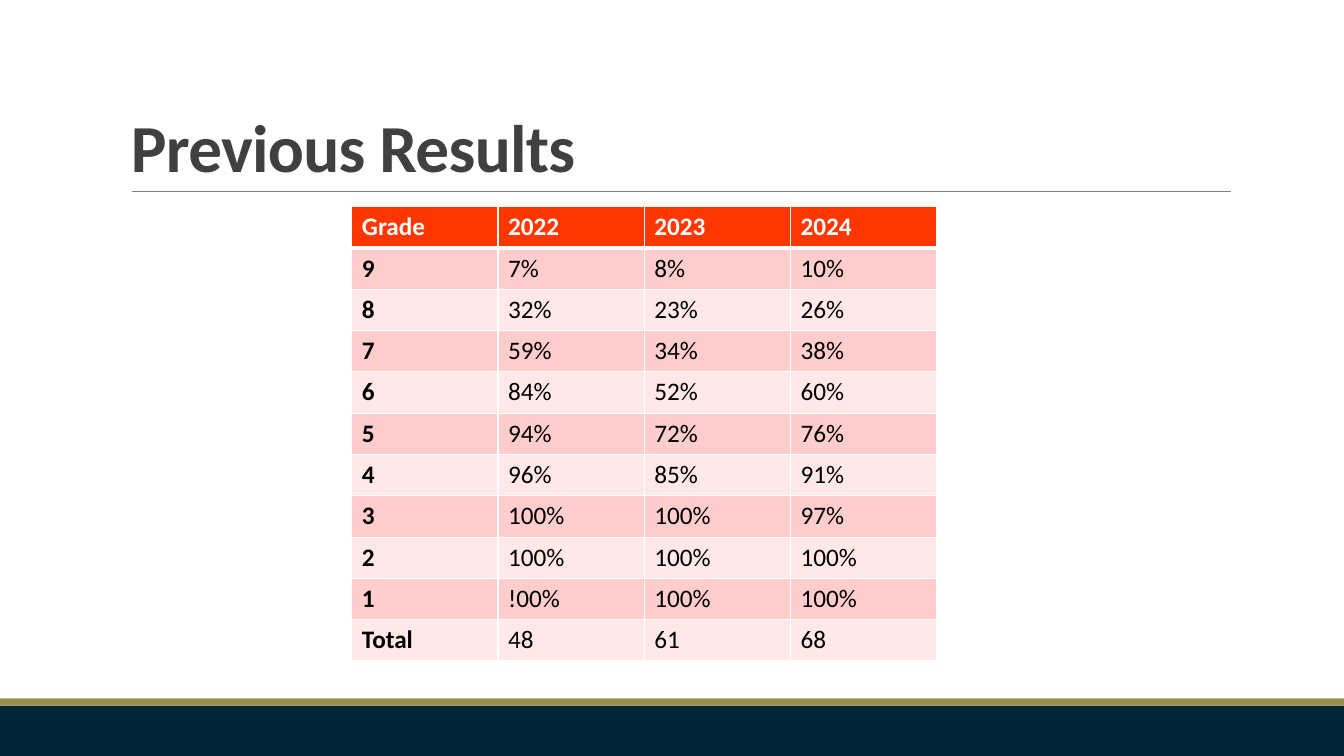
from dataclasses import dataclass
from typing import Any

from lxml import etree
from pptx import Presentation
from pptx.dml.color import RGBColor
from pptx.enum.shapes import MSO_CONNECTOR, MSO_SHAPE
from pptx.enum.text import MSO_ANCHOR
from pptx.oxml.ns import qn
from pptx.util import Inches, Pt

RECTANGLE = MSO_SHAPE.RECTANGLE
STRAIGHT = MSO_CONNECTOR.STRAIGHT
BOTTOM = MSO_ANCHOR.BOTTOM


@dataclass(frozen=True)
class Theme:
    font: str = "Calibri"
    title_size: float = 48
    table_size: float = 18
    title: str = "404040"
    rule: str = "808080"
    navy: str = "002639"
    gold: str = "998F4D"
    header: str = "FF3600"
    bands: tuple[str, str] = ("FFCECC", "FFE8E7")
    white: str = "FFFFFF"
    black: str = "000000"


@dataclass(frozen=True)
class FooterBand:
    top: float
    height: float
    color: str


THEME = Theme()
SLIDE_WIDTH, SLIDE_HEIGHT = 13.33, 7.5
FOOTER_BANDS = (
    FooterBand(7, 0.5, THEME.navy),
    FooterBand(6.93, 0.07, THEME.gold),
)
COLUMN_WIDTH, ROW_HEIGHT = 1.45, 0.41
RESULTS = (
    ("Grade", "2022", "2023", "2024"),
    ("9", "7%", "8%", "10%"),
    ("8", "32%", "23%", "26%"),
    ("7", "59%", "34%", "38%"),
    ("6", "84%", "52%", "60%"),
    ("5", "94%", "72%", "76%"),
    ("4", "96%", "85%", "91%"),
    ("3", "100%", "100%", "97%"),
    ("2", "100%", "100%", "100%"),
    ("1", "!00%", "100%", "100%"),
    ("Total", "48", "61", "68"),
)


def rgb(color: str) -> RGBColor:
    return RGBColor.from_string(color)


def write(paragraph: Any, text: str, size: float, color: str, bold: bool) -> Any:
    run = paragraph.add_run()
    run.text = text
    font_format = {"name": THEME.font, "size": Pt(size), "bold": bold}
    for attribute, value in font_format.items():
        setattr(run.font, attribute, value)
    run.font.color.rgb = rgb(color)
    return run


def draw_footer_band(slide: Any, band: FooterBand) -> None:
    strip = slide.shapes.add_shape(
        RECTANGLE, 0, Inches(band.top), Inches(SLIDE_WIDTH), Inches(band.height)
    )
    strip.shadow.inherit = False
    strip.fill.solid()
    strip.fill.fore_color.rgb = rgb(band.color)
    strip.line.fill.background()


def draw_title_rule(slide: Any) -> None:
    rule = slide.shapes.add_connector(
        STRAIGHT, Inches(1.31), Inches(1.9), Inches(12.21), Inches(1.9)
    )
    rule.line.color.rgb = rgb(THEME.rule)
    rule.line.width = Pt(0.5)
    etree.SubElement(rule.line._get_or_add_ln().getparent(), qn("a:effectLst"))


def draw_title(slide: Any, text: str) -> None:
    heading = slide.shapes.add_textbox(
        Inches(1.2), Inches(0.31), Inches(11), Inches(1.59)
    ).text_frame
    frame_format = {"word_wrap": True, "vertical_anchor": BOTTOM}
    for attribute, value in frame_format.items():
        setattr(heading, attribute, value)
    paragraph = heading.paragraphs[0]
    paragraph.line_spacing = 0.85
    run = write(paragraph, text, THEME.title_size, THEME.title, True)
    run.font._element.set("spc", "-50")


def add_borders(cell: Any, row: int) -> None:
    """White cell edges, thicker between the header and the first grade."""
    widths = {
        "a:lnL": 1,
        "a:lnR": 1,
        "a:lnT": 3 if row == 1 else 1,
        "a:lnB": 3 if row == 0 else 1,
    }
    properties = cell._tc.get_or_add_tcPr()
    for tag, width in widths.items():
        edge = etree.SubElement(properties, qn(tag), w=str(Pt(width)))
        fill = etree.SubElement(edge, qn("a:solidFill"))
        etree.SubElement(fill, qn("a:srgbClr"), val=THEME.white)


def draw_results(slide: Any) -> None:
    row_count, column_count = len(RESULTS), len(RESULTS[0])
    table = slide.shapes.add_table(
        row_count, column_count, Inches(3.49), Inches(2.05),
        Inches(COLUMN_WIDTH * column_count), Inches(ROW_HEIGHT * row_count),
    ).table
    for column in table.columns:
        column.width = Inches(COLUMN_WIDTH)
    for row, values in enumerate(RESULTS):
        table.rows[row].height = Inches(ROW_HEIGHT)
        is_header = row == 0
        background = THEME.header if is_header else THEME.bands[(row - 1) % 2]
        text_color = THEME.white if is_header else THEME.black
        for column, value in enumerate(values):
            cell = table.cell(row, column)
            add_borders(cell, row)
            cell.fill.solid()
            cell.fill.fore_color.rgb = rgb(background)
            write(cell.text_frame.paragraphs[0], value, THEME.table_size,
                  text_color, is_header or column == 0)


def main() -> None:
    presentation = Presentation()
    presentation.slide_width = Inches(SLIDE_WIDTH)
    presentation.slide_height = Inches(SLIDE_HEIGHT)
    slide = presentation.slides.add_slide(presentation.slide_layouts[6])
    for band in FOOTER_BANDS:
        draw_footer_band(slide, band)
    draw_title_rule(slide)
    draw_title(slide, "Previous Results")
    draw_results(slide)
    presentation.save("out.pptx")


if __name__ == "__main__":
    main()
